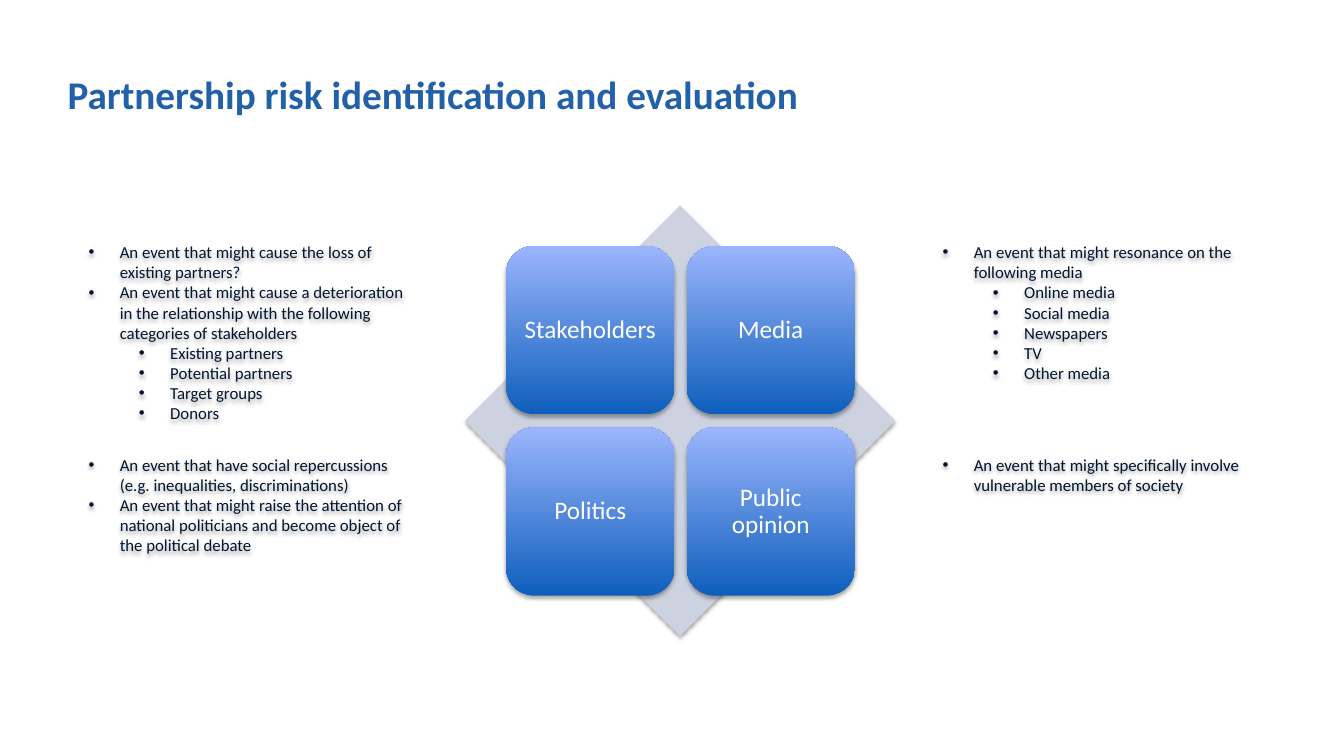
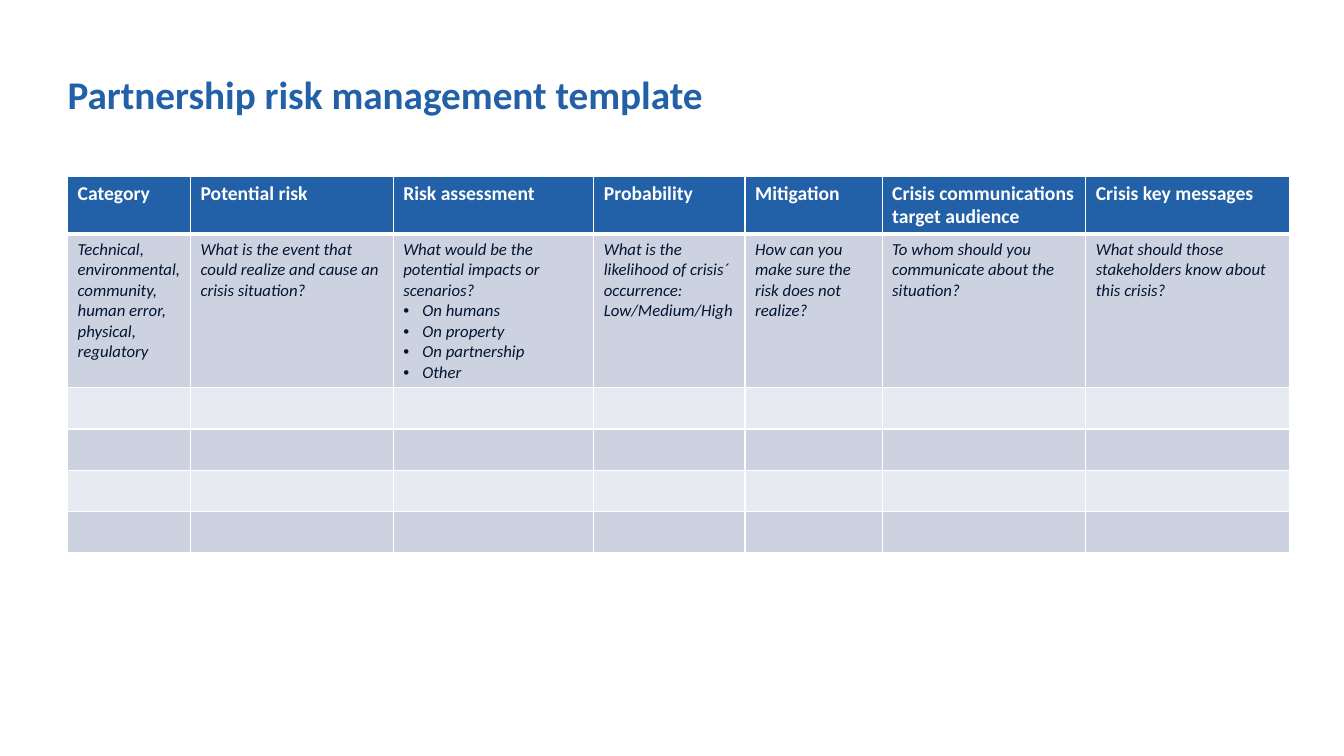
from lxml import etree
from pptx import Presentation
from pptx.dml.color import RGBColor
from pptx.enum import shapes as sh, text as tx
from pptx.oxml.ns import qn
from pptx.util import Inches, Pt

BLUE, NAVY, WHITE = "2260A8", "021631", "FFFFFF"
BAND, PALE = "CDD2E1", "E8EAF1"
LOW, HIGH = "0E5FBC", "9BB5FC"
BODY = {"size": Pt(12), "color": NAVY}
NOTE = {**BODY, "italic": True}
HEAD = {"size": Pt(14), "color": WHITE, "bold": True}
TITLE = {"size": Pt(28), "color": BLUE, "bold": True}
TILE = {"size": Pt(18), "color": WHITE}

TILES = ["Stakeholders", "Media", "Politics", "Public opinion"]
# Each list: left, top, height, then (level, text) items
LISTS = [
    (0.78, 2.35, 1.92, [
        (0, "An event that might cause the loss of existing partners?"),
        (0, "An event that might cause a deterioration in the relationship "
            "with the following categories of stakeholders"),
        (1, "Existing partners"), (1, "Potential partners"),
        (1, "Target groups"), (1, "Donors")]),
    (9.25, 2.35, 1.92, [
        (0, "An event that might resonance on the following media"),
        (1, "Online media"), (1, "Social media"), (1, "Newspapers"),
        (1, "TV"), (1, "Other media")]),
    (0.78, 4.46, 0.83, [
        (0, "An event that have social repercussions "
            "(e.g. inequalities, discriminations)"),
        (0, "An event that might raise the attention of national politicians "
            "and become object of the political debate")]),
    (9.25, 4.46, 0.83, [
        (0, "An event that might specifically involve vulnerable members "
            "of society")]),
]
# Each column: width, heading, prompt, bullets
COLUMNS = [
    (1.22, "Category", "Technical, environmental, community, human error, "
     "physical, regulatory", []),
    (2.01, "Potential risk", "What is the event that could realize and cause "
     "an crisis situation?", []),
    (1.99, "Risk assessment", "What would be the potential impacts or "
     "scenarios?", ["On humans", "On property", "On partnership", "Other"]),
    (1.5, "Probability", "What is the likelihood of crisis´ occurrence: "
     "Low/Medium/High", []),
    (1.36, "Mitigation", "How can you make sure the risk does not realize?",
     []),
    (2.02, "Crisis communications target audience",
     "To whom should you communicate about the situation?", []),
    (2.02, "Crisis key messages",
     "What should those stakeholders know about this crisis?", []),
]
ROWS, ROW = 6, 0.41


def rgb(code):
    return RGBColor.from_string(code)


def sub(parent, tag, **attrs):
    return etree.SubElement(parent, qn(tag), attrs)


def write(para, words, style):
    run = para.add_run()
    run.text = words
    run.font.name = "Calibri"
    for name, value in style.items():
        if name == "color":
            run.font.color.rgb = rgb(value)
        else:
            setattr(run.font, name, value)


def bullet(para, left, hang):
    props = para._p.get_or_add_pPr()
    props.set("marL", str(Inches(left)))
    props.set("indent", str(-Inches(hang)))
    sub(props, "a:buFont", typeface="Arial")
    sub(props, "a:buChar", char="•")


def fill_in(frame, items, style, hang):
    """Write (level, text) items; level None means no bullet."""
    for i, (level, words) in enumerate(items):
        para = frame.add_paragraph() if i else frame.paragraphs[0]
        if level is not None:
            para.level = level
            bullet(para, hang + level * 0.5, hang)
        write(para, words, style)


def shade(shape):
    """Give a shape a soft shadow below it."""
    shape.shadow.inherit = False
    effects = shape._element.spPr.find(qn("a:effectLst"))
    cast = sub(effects, "a:outerShdw", blurRad=str(Pt(3.1)),
               dist=str(Pt(1.8)), dir="5400000", rotWithShape="0")
    sub(sub(cast, "a:srgbClr", val="000000"), "a:alpha", val="35000")


def edge(cell, **widths):
    """Draw white cell borders; L, R, T and B are widths in points."""
    props = cell._tc.get_or_add_tcPr()
    for side in "LRTB":
        line = sub(props, "a:ln" + side, w=str(Pt(widths.get(side, 1))))
        sub(sub(line, "a:solidFill"), "a:srgbClr", val=WHITE)


def add_slide(deck, words):
    slide = deck.slides.add_slide(deck.slide_layouts[5])
    title = slide.shapes.title
    frame = title.text_frame
    looks = [
        (title, {"left": 0.67, "top": 0.21, "width": 10.26, "height": 1}),
        (frame, {"margin_left": 0, "margin_top": 0.08,
                 "margin_right": 0.1, "margin_bottom": 0.05})]
    for part, sizes in looks:
        for name, value in sizes.items():
            setattr(part, name, Inches(value))
    frame.vertical_anchor = tx.MSO_ANCHOR.BOTTOM
    frame.auto_size = tx.MSO_AUTO_SIZE.NONE
    frame.paragraphs[0].alignment = tx.PP_ALIGN.LEFT
    write(frame.paragraphs[0], words, TITLE)
    return slide


def add_shape(slide, kind, left, top, size):
    shape = slide.shapes.add_shape(
        kind, Inches(left), Inches(top), Inches(size), Inches(size))
    shape.line.fill.background()
    shade(shape)
    return shape


def add_tile(slide, left, top, words):
    tile = add_shape(slide, sh.MSO_SHAPE.ROUNDED_RECTANGLE, left, top, 1.67)
    tile.fill.gradient()
    tile.fill.gradient_angle = 90
    for stop, code in zip(tile.fill.gradient_stops, (LOW, HIGH)):
        stop.color.rgb = rgb(code)
    frame = tile.text_frame
    for side in ("left", "top", "right", "bottom"):
        setattr(frame, "margin_" + side, Inches(0.07))
    frame.word_wrap = True
    frame.vertical_anchor = tx.MSO_ANCHOR.MIDDLE
    para = frame.paragraphs[0]
    para.alignment = tx.PP_ALIGN.CENTER
    para.line_spacing = 0.9
    write(para, words, TILE)


def add_matrix(slide):
    diamond = add_shape(slide, sh.MSO_SHAPE.DIAMOND, 4.61, 2.04, 4.27)
    diamond.fill.solid()
    diamond.fill.fore_color.rgb = rgb(BAND)
    for i, words in enumerate(TILES):
        row, col = divmod(i, 2)
        add_tile(slide, 5.02 + col * 1.79, 2.44 + row * 1.8, words)


def add_list(slide, left, top, height, items):
    box = slide.shapes.add_textbox(
        Inches(left), Inches(top), Inches(3.47), Inches(height))
    box.text_frame.word_wrap = True
    fill_in(box.text_frame, items, BODY, 0.31)
    shade(box)


def add_grid(slide):
    width = sum(col[0] for col in COLUMNS)
    table = slide.shapes.add_table(
        ROWS, len(COLUMNS), Inches(0.67), Inches(1.75),
        Inches(width), Inches(ROWS * ROW)).table
    for c, (wide, head, prompt, points) in enumerate(COLUMNS):
        table.columns[c].width = Inches(wide)
        for r in range(ROWS):
            cell = table.cell(r, c)
            edge(cell, T=3 if r == 1 else 1, B=1 if r else 3)
            cell.fill.solid()
            code = (BAND if r % 2 else PALE) if r else BLUE
            cell.fill.fore_color.rgb = rgb(code)
        fill_in(table.cell(0, c).text_frame, [(None, head)], HEAD, 0)
        notes = [(None, prompt)] + [(0, point) for point in points]
        fill_in(table.cell(1, c).text_frame, notes, NOTE, 0.19)


def main():
    deck = Presentation()
    deck.slide_width, deck.slide_height = Inches(13.33), Inches(7.5)
    slide = add_slide(deck, "Partnership risk identification and evaluation")
    add_matrix(slide)
    for part in LISTS:
        add_list(slide, *part)
    add_grid(add_slide(deck, "Partnership risk management template"))
    deck.save("out.pptx")


if __name__ == "__main__":
    main()
